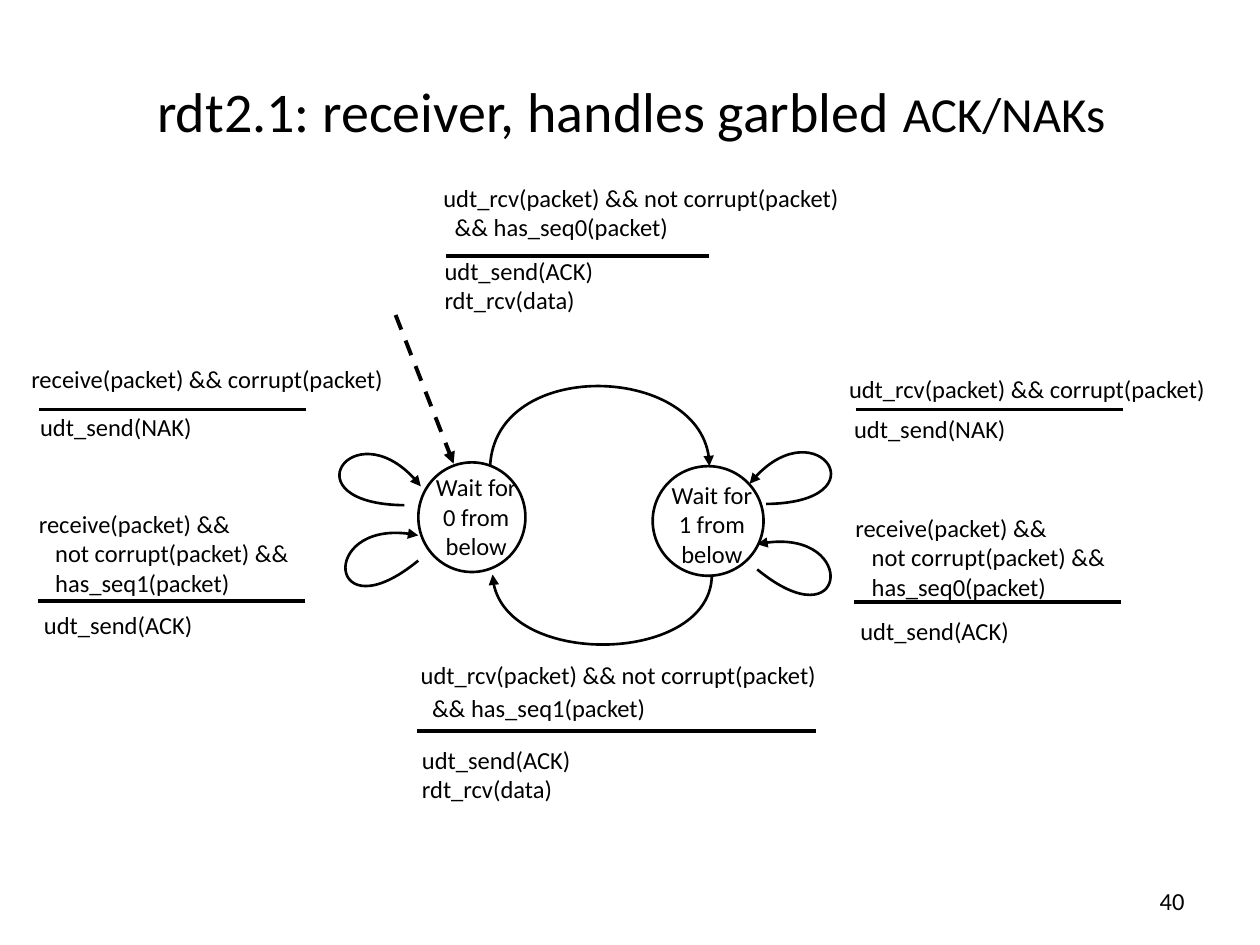
"""Build the rdt2.1 receiver state machine slide."""
from lxml import etree
from pptx import Presentation
from pptx.dml.color import RGBColor
from pptx.enum.dml import MSO_LINE
from pptx.enum.shapes import MSO_CONNECTOR, MSO_SHAPE
from pptx.enum.text import MSO_ANCHOR, PP_ALIGN
from pptx.oxml.ns import qn
from pptx.util import Pt

PX = 9144
BLACK = RGBColor(0, 0, 0)
WHITE = RGBColor(255, 255, 255)
FONT = "Calibri"
LEFT, CENTER, RIGHT = PP_ALIGN.LEFT, PP_ALIGN.CENTER, PP_ALIGN.RIGHT
TOP, MIDDLE = MSO_ANCHOR.TOP, MSO_ANCHOR.MIDDLE
STRAIGHT = MSO_CONNECTOR.STRAIGHT
OVAL = MSO_SHAPE.OVAL
DASH = MSO_LINE.DASH

presentation = Presentation()
presentation.slide_width = 1000 * PX
presentation.slide_height = 750 * PX
slide = presentation.slides.add_slide(presentation.slide_layouts[6])


def add_text(box, text, size=14, align=LEFT, anchor=TOP, indent=0):
    shape = slide.shapes.add_textbox(*(value * PX for value in box))
    frame = shape.text_frame
    frame.word_wrap = True
    frame.vertical_anchor = anchor
    frame.text = text
    for index, paragraph in enumerate(frame.paragraphs):
        paragraph.alignment = align
        if index and indent:
            paragraph._p.get_or_add_pPr().set("marL", str(indent * PX))
        for run in paragraph.runs:
            run.font.name = FONT
            run.font.size = Pt(size)
            run.font.color.rgb = BLACK
    return frame


def style_line(shape, width, arrow=False):
    shape.line.color.rgb = BLACK
    shape.line.width = Pt(width)
    if arrow:
        line = shape.line._get_or_add_ln()
        etree.SubElement(line, qn("a:tailEnd"), type="triangle")


title = add_text((46, 25, 910, 125), "rdt2.1: receiver, handles garbled ", 32, CENTER, MIDDLE)
acknowledgements = title.paragraphs[0].add_run()
acknowledgements.text = "ACK/NAKs"
acknowledgements.font.name = FONT
acknowledgements.font.size = Pt(28)
acknowledgements.font.color.rgb = BLACK
add_text((717, 695, 233, 40), "40", align=RIGHT, anchor=MIDDLE)

states = [
    ((332, 367, 85, 87), (334, 370, 88, 67), "0"),
    ((518, 370, 88, 87), (521, 376, 88, 67), "1"),
]
for circle_box, label_box, sequence in states:
    circle = slide.shapes.add_shape(OVAL, *(value * PX for value in circle_box))
    circle.shadow.inherit = False
    circle.fill.solid()
    circle.fill.fore_color.rgb = WHITE
    style_line(circle, 1.5)
    add_text(label_box, f"Wait for \n{sequence} from below", align=CENTER)

transitions = [
    [(389, 370), (393, 284), (563, 289), (563, 370)],
    [(565, 456), (565, 527), (394, 531), (391, 456)],
    [(608, 400), (701, 399), (646, 320), (595, 384)],
    [(601, 452), (673, 511), (682, 415), (601, 432)],
    [(332, 445), (260, 504), (252, 408), (332, 425)],
    [(321, 401), (228, 400), (283, 321), (334, 386)],
]
for start, *controls in transitions:
    builder = slide.shapes.build_freeform(*start, scale=PX)
    builder.add_line_segments(controls, close=False)
    curve = builder.convert_to_shape()
    curve.shadow.inherit = False
    curve.fill.background()
    style_line(curve, 1.5, arrow=True)
    segments = curve._element.xpath(".//a:lnTo")
    outline = segments[0].getparent()
    bezier = etree.SubElement(outline, qn("a:cubicBezTo"))
    for segment in segments:
        bezier.append(segment[0])
        outline.remove(segment)

rules = [
    (354, 203, 563, 203),
    (31, 325, 243, 325),
    (679, 325, 891, 325),
    (30, 477, 242, 477),
    (678, 478, 890, 478),
    (331, 580, 648, 580),
]
initial_arrow = (314, 250, 360, 368)
for ends in [*rules, initial_arrow]:
    connector = slide.shapes.add_connector(STRAIGHT, *(value * PX for value in ends))
    if ends == initial_arrow:
        connector.line.dash_style = DASH
    style_line(connector, 2.25, arrow=ends == initial_arrow)
    etree.SubElement(connector._element.spPr, qn("a:effectLst"))

labels = [
    ((342, 140, 435, 62), "udt_rcv(packet) && not corrupt(packet)\n&& has_seq0(packet)", 9),
    ((343, 198, 380, 77), "udt_send(ACK)\nrdt_rcv(data)", 0),
    ((15, 284, 314, 67), "receive(packet) && corrupt(packet)", 0),
    ((22, 322, 331, 45), "udt_send(NAK)", 0),
    ((21, 399, 287, 67), "receive(packet) &&\nnot corrupt(packet) &&\nhas_seq1(packet)", 13),
    ((25, 479, 322, 45), "udt_send(ACK)", 0),
    ((664, 292, 314, 67), "udt_rcv(packet) && corrupt(packet)", 0),
    ((668, 324, 331, 45), "udt_send(NAK)", 0),
    ((669, 402, 287, 67), "receive(packet) &&\nnot corrupt(packet) &&\nhas_seq0(packet)", 13),
    ((673, 484, 313, 45), "udt_send(ACK)", 0),
    ((325, 586, 421, 109), "udt_send(ACK)\nrdt_rcv(data)", 0),
]
for box, text, indent in labels:
    add_text(box, text, indent=indent)

return_event = add_text(
    (324, 519, 392, 62), "udt_rcv(packet) && not corrupt(packet)\n&& has_seq1(packet)", indent=9
)
return_event.paragraphs[1].space_before = Pt(2)

presentation.save("out.pptx")
